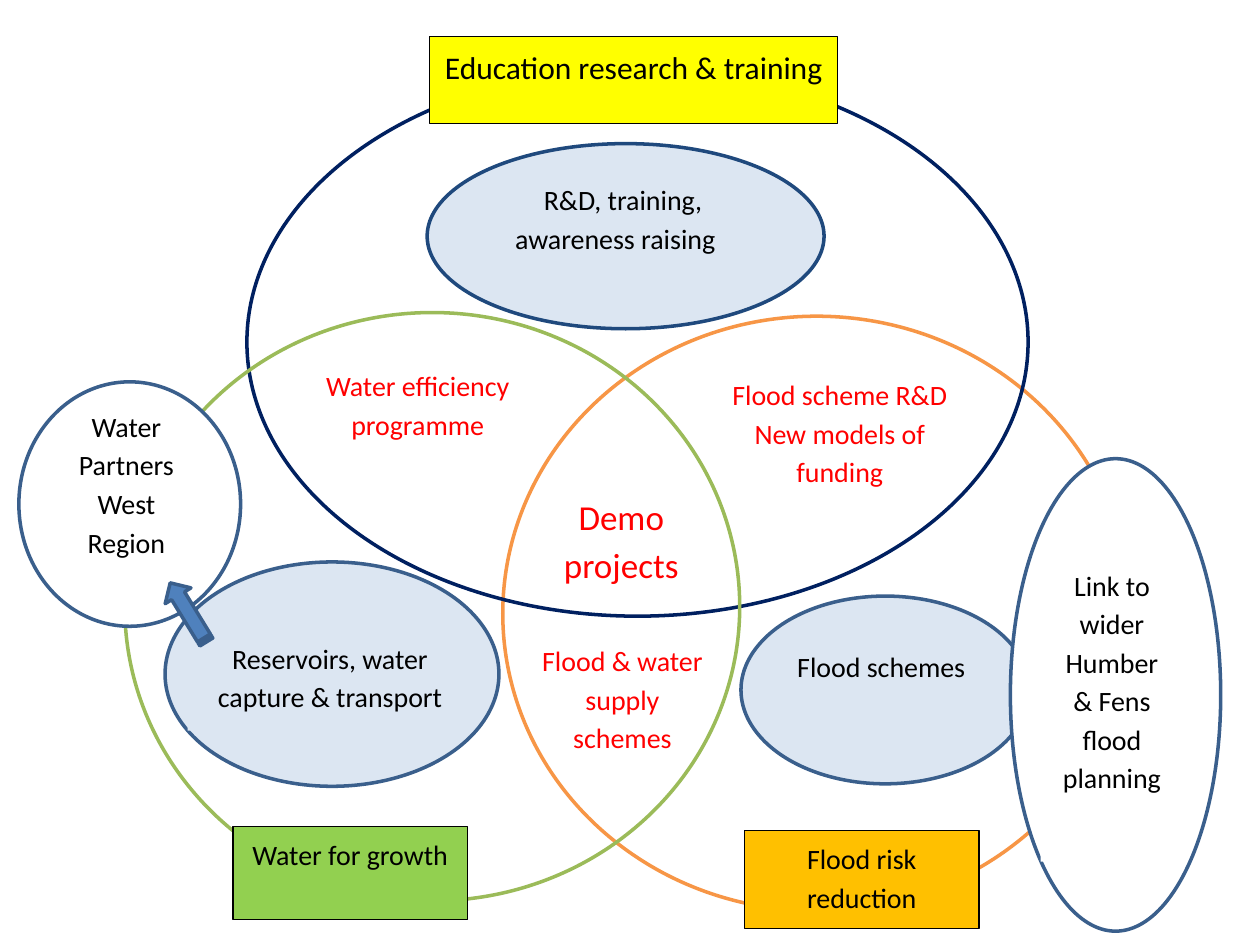
from pptx import Presentation
from pptx.dml.color import RGBColor
from pptx.enum.shapes import MSO_SHAPE
from pptx.enum.text import MSO_ANCHOR, PP_ALIGN
from pptx.util import Pt

BLACK, WHITE, RED = "000000", "FFFFFF", "FF0000"
PALE, EDGE = "DCE6F2", "3A5F8C"


def color(hex_string):
    return RGBColor.from_string(hex_string)


def write(sp, text, size=16, ink=BLACK, aligns=(), after=0):
    """Fill a shape with one paragraph per line; lines are centred unless aligns says otherwise."""
    tf = sp.text_frame
    tf.word_wrap = True
    tf.vertical_anchor = MSO_ANCHOR.TOP
    for i, line in enumerate(text.split("\n")):
        p = tf.paragraphs[0] if i == 0 else tf.add_paragraph()
        p.alignment = aligns[i] if i < len(aligns) else PP_ALIGN.CENTER
        p.line_spacing = 1.15
        p.space_after = Pt(after)
        r = p.add_run()
        r.text = line
        r.font.name = "Calibri"
        r.font.size = Pt(size)
        r.font.color.rgb = color(ink)


class Diagram:
    line_width = 2
    frame_width = 0.75

    def __init__(self, slide):
        self.s = slide

    def shape(self, kind, box, fill=None, line=None, width=line_width):
        sp = self.s.shapes.add_shape(kind, *map(Pt, box))
        sp.shadow.inherit = False
        if fill:
            sp.fill.solid()
            sp.fill.fore_color.rgb = color(fill)
        else:
            sp.fill.background()
        if line:
            sp.line.color.rgb = color(line)
            sp.line.width = Pt(width)
        else:
            sp.line.fill.background()
        return sp

    def ellipse(self, box, fill=None, line=EDGE):
        return self.shape(MSO_SHAPE.OVAL, box, fill, line)

    def heading(self, box, fill, text, size=16):
        sp = self.shape(MSO_SHAPE.RECTANGLE, box, fill, BLACK, self.frame_width)
        write(sp, text, size=size, after=10)

    def panel(self, box, fill, text, **fmt):
        write(self.shape(MSO_SHAPE.RECTANGLE, box, fill), text, **fmt)

    def label(self, box, text, **fmt):
        write(self.s.shapes.add_textbox(*map(Pt, box)), text, **fmt)

    def arrow(self, box, rotation):
        sp = self.shape(MSO_SHAPE.STRIPED_RIGHT_ARROW, box, "4F81BD", EDGE)
        sp.rotation = rotation


def main():
    prs = Presentation()
    prs.slide_width, prs.slide_height = Pt(720), Pt(540)
    d = Diagram(prs.slides.add_slide(prs.slide_layouts[6]))

    # Overlapping themes and the activities inside them
    d.ellipse((287.3, 180.7, 358.6, 339.8), line="F79646")
    d.ellipse((423.4, 340.6, 164.9, 107.3), PALE)
    d.ellipse((94.3, 321.1, 190.8, 128.2), PALE)
    d.ellipse((244.1, 82.1, 226.8, 105.8), PALE, "1F497D")
    d.ellipse((141.1, 38.9, 446.4, 313.2), line="002060")
    d.ellipse((71.3, 178.6, 351.4, 336.2), line="9BBB59")

    d.heading((245.5, 20.9, 233.3, 49.7), "FFFF00", "Education research & training", size=18)
    d.heading((133.2, 472.3, 133.9, 53.3), "92D050", "Water for growth")
    d.heading((425.5, 474.5, 133.9, 56.2), "FFC000", "Flood risk reduction")

    d.panel((107.3, 360, 162.7, 57.6), PALE, "Reservoirs, water capture & transport")
    d.panel((447.1, 365, 113, 55.4), PALE, "Flood schemes")
    d.label((406.8, 209.5, 146.2, 103), "Flood scheme R&D\nNew models of funding", ink=RED)
    d.panel((287.3, 97.9, 137.5, 67.7), PALE, "R&D, training,\nawareness raising",
            aligns=(PP_ALIGN.CENTER, PP_ALIGN.LEFT))

    # Links to wider programmes and the shared areas
    d.ellipse((577.4, 262.1, 120.2, 270), WHITE)
    d.panel((594.7, 318.2, 81.4, 174.2), WHITE,
            "Link to wider Humber & Fens flood planning", after=10)
    d.panel((308.9, 275.8, 92.2, 63.4), WHITE, "Demo projects", size=20, ink=RED)
    d.label((301.7, 361.4, 108, 72.7), "Flood & water supply schemes", ink=RED)
    d.ellipse((10.8, 218.2, 126.7, 139.7), WHITE)
    d.label((30.2, 227.5, 84.2, 84.2), "Water Partners West Region", after=10)
    d.panel((175.7, 204.5, 126, 72), WHITE, "Water efficiency programme", ink=RED)
    d.arrow((87.8, 341.3, 39.6, 17.3), 238.5)

    prs.save("out.pptx")


if __name__ == "__main__":
    main()
